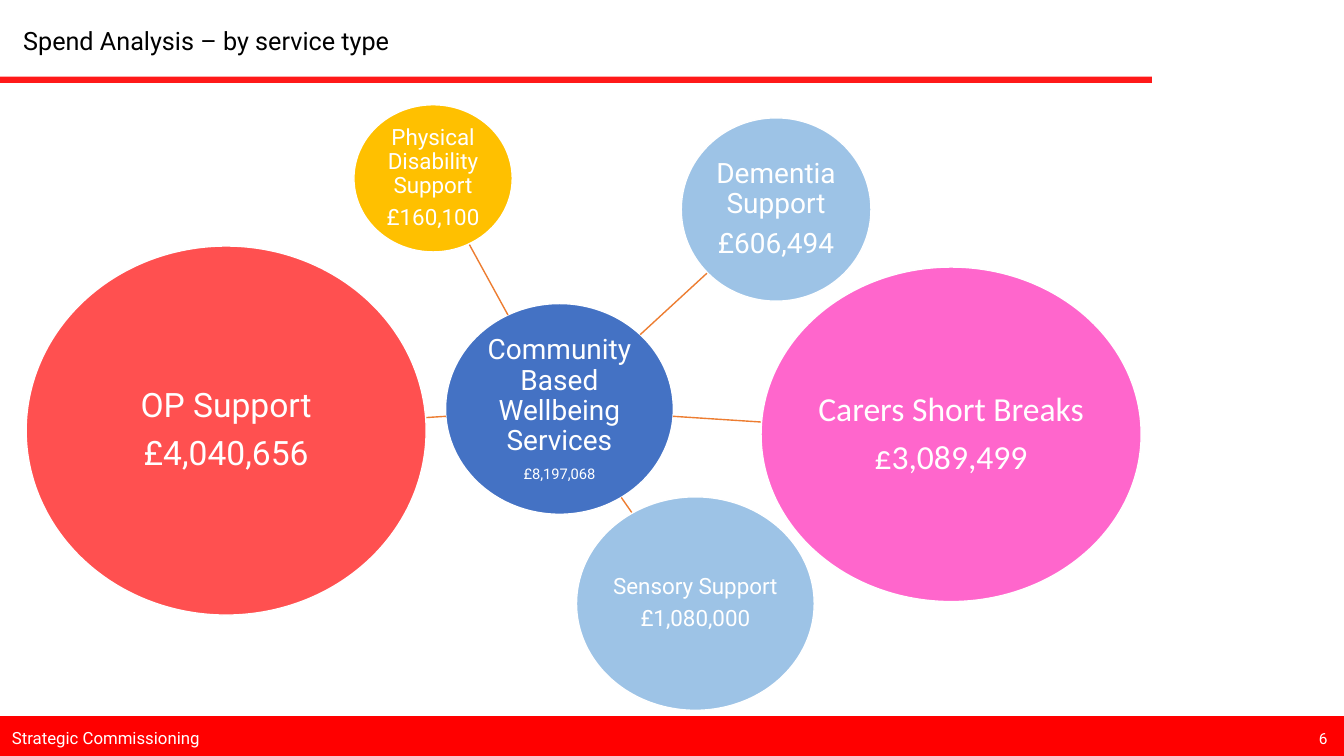
from dataclasses import dataclass
from math import hypot

from lxml.etree import SubElement
from pptx import Presentation
from pptx.dml.color import RGBColor
from pptx.enum.shapes import MSO_CONNECTOR, MSO_SHAPE
from pptx.enum.text import MSO_ANCHOR, MSO_AUTO_SIZE, PP_ALIGN
from pptx.oxml.ns import qn
from pptx.util import Cm, Pt


@dataclass(frozen=True)
class Theme:
    """Colours, fonts and type sizes of the slide."""
    white: str = "FFFFFF"
    black: str = "000000"
    brand_red: str = "FF0000"
    spoke: str = "ED7D31"
    hub: str = "4472C4"
    coral: str = "FF5050"
    amber: str = "FFC000"
    pink: str = "FF66CC"
    sky: str = "9DC3E6"
    font: str = "Roboto"
    carers_font: str = "Calibri"
    title_size: float = 18
    footer_size: float = 12
    number_size: float = 11
    large: float = 24
    medium: float = 20
    small: float = 16
    total_size: float = 10.5


THEME = Theme()


@dataclass(frozen=True)
class Bubble:
    """A spend bubble, with its box in centimetres."""
    name: str
    amount: str
    box: tuple
    colour: str
    name_size: float
    amount_size: float
    font: str = THEME.font

    @property
    def centre(self):
        """Return the middle of the bubble."""
        left, top, width, height = self.box
        return left + width / 2, top + height / 2

    def edge_towards(self, other):
        """Return the point on the outline that faces another bubble."""
        (x, y), (other_x, other_y) = self.centre, other.centre
        width, height = self.box[2:]
        dx, dy = other_x - x, other_y - y
        scale = 1 / hypot(2 * dx / width, 2 * dy / height)
        return x + dx * scale, y + dy * scale


HUB = Bubble("Community Based Wellbeing Services", "£8,197,068",
             (11.23, 7.65, 5.74, 5.31), THEME.hub, THEME.medium, THEME.total_size)
SERVICES = [
    Bubble("OP Support", "£4,040,656", (0.66, 6.2, 10.08, 9.3),
           THEME.coral, THEME.large, THEME.large),
    Bubble("Physical Disability Support", "£160,100", (8.92, 2.64, 3.99, 3.71),
           THEME.amber, THEME.small, THEME.small),
    Bubble("Carers Short Breaks", "£3,089,499", (19.18, 6.73, 9.58, 8.43),
           THEME.pink, THEME.large, THEME.large, THEME.carers_font),
    Bubble("Sensory Support", "£1,080,000", (14.53, 12.52, 5.99, 5.38),
           THEME.sky, THEME.small, THEME.small),
    Bubble("Dementia Support", "£606,494", (17.17, 2.97, 4.78, 4.62),
           THEME.sky, THEME.medium, THEME.medium),
]


def style_paragraph(paragraph, size, colour, font=THEME.font):
    """Format every run of a paragraph."""
    for run in paragraph.runs:
        run.font.size = Pt(size)
        run.font.name = font
        run.font.color.rgb = RGBColor.from_string(colour)


def add_filled_shape(slide, kind, box, fill, line):
    """Add a flat preset shape with a one-point outline."""
    shape = slide.shapes.add_shape(kind, *map(Cm, box))
    shape.shadow.inherit = False
    shape.fill.solid()
    shape.fill.fore_color.rgb = RGBColor.from_string(fill)
    shape.line.color.rgb = RGBColor.from_string(line)
    shape.line.width = Pt(1)
    return shape


def add_line(slide, start, end, colour, width):
    """Add a straight line without a shadow."""
    line = slide.shapes.add_connector(MSO_CONNECTOR.STRAIGHT, *map(Cm, (*start, *end)))
    line.line.color.rgb = RGBColor.from_string(colour)
    line.line.width = Pt(width)
    SubElement(line._element.spPr, qn("a:effectLst"))
    return line


def add_label(slide, text, box, size, anchor):
    """Add a one-line white text box."""
    label = slide.shapes.add_textbox(*map(Cm, box))
    label.text_frame.text = text
    label.text_frame.vertical_anchor = anchor
    style_paragraph(label.text_frame.paragraphs[0], size, THEME.white)


def add_bubble(slide, bubble):
    """Add a circle holding a service name and its spend."""
    shape = add_filled_shape(slide, MSO_SHAPE.OVAL, bubble.box, bubble.colour, THEME.white)
    frame = shape.text_frame
    frame.word_wrap = True
    frame.vertical_anchor = MSO_ANCHOR.MIDDLE
    frame.margin_left = frame.margin_right = Cm(0.04)
    frame.margin_top = frame.margin_bottom = Cm(0.04)
    frame.text = f"{bubble.name}\n{bubble.amount}"
    for paragraph, size in zip(frame.paragraphs, (bubble.name_size, bubble.amount_size)):
        paragraph.alignment = PP_ALIGN.CENTER
        paragraph.line_spacing = 0.9
        paragraph.space_after = Pt(0.35 * size)
        style_paragraph(paragraph, size, THEME.white, bubble.font)


def add_title(slide, text):
    """Place and format the title."""
    title = slide.shapes.title
    title.left, title.top, title.width, title.height = map(Cm, (0.33, 0.51, 11.48, 1.02))
    frame = title.text_frame
    frame.text = text
    frame.word_wrap = True
    frame.auto_size = MSO_AUTO_SIZE.NONE
    frame.vertical_anchor = MSO_ANCHOR.TOP
    frame.paragraphs[0].alignment = PP_ALIGN.LEFT
    style_paragraph(frame.paragraphs[0], THEME.title_size, THEME.black)


def add_page_frame(slide):
    """Add the title rule and the footer."""
    add_filled_shape(slide, MSO_SHAPE.RECTANGLE, (0, 18.06, 33.87, 1),
                     THEME.brand_red, THEME.brand_red)
    rule = add_line(slide, (0, 2.01), (29.03, 2.01), THEME.brand_red, 4.5)
    colour = rule._element.spPr.find(".//" + qn("a:srgbClr"))
    SubElement(colour, qn("a:alpha"), val="90000")
    add_label(slide, "Strategic Commissioning", (0.05, 18.08, 5.92, 1.02),
              THEME.footer_size, MSO_ANCHOR.MIDDLE)
    add_label(slide, "6", (32.99, 18.24, 0.86, 0.74), THEME.number_size, MSO_ANCHOR.TOP)


def main():
    """Build and save the spend analysis slide."""
    presentation = Presentation()
    presentation.slide_width, presentation.slide_height = Cm(33.87), Cm(19.05)
    slide = presentation.slides.add_slide(presentation.slide_layouts[5])
    add_title(slide, "Spend Analysis – by service type")
    add_page_frame(slide)
    add_bubble(slide, HUB)
    for service in SERVICES:
        add_line(slide, HUB.edge_towards(service), service.edge_towards(HUB), THEME.spoke, 1)
        add_bubble(slide, service)
    presentation.save("out.pptx")


if __name__ == "__main__":
    main()
